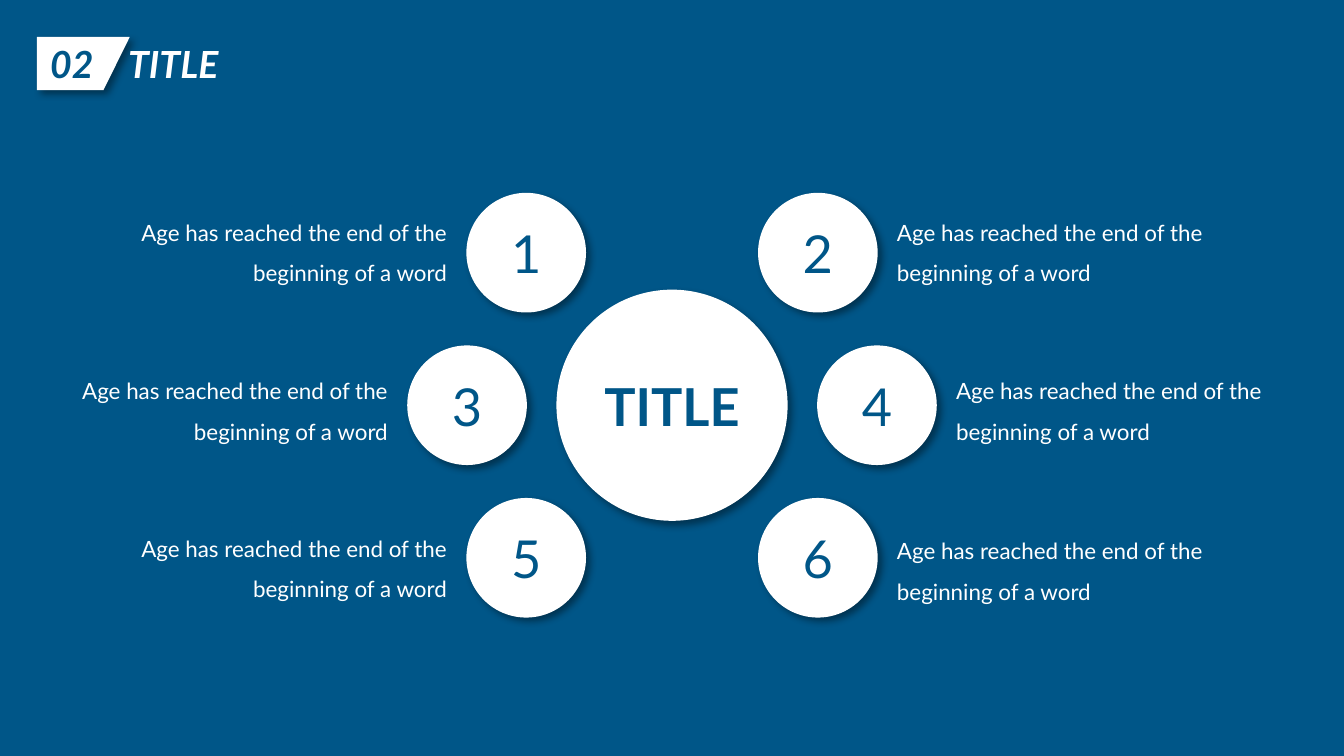
from dataclasses import dataclass

from lxml.etree import SubElement
from pptx import Presentation
from pptx.dml.color import RGBColor
from pptx.enum.shapes import MSO_SHAPE as Shape
from pptx.enum.text import MSO_ANCHOR as Anchor, PP_ALIGN as Align
from pptx.oxml.ns import qn
from pptx.util import Inches, Pt


@dataclass(frozen=True)
class Theme:
    blue: RGBColor = RGBColor(0x00, 0x56, 0x88)
    white: RGBColor = RGBColor(0xFF, 0xFF, 0xFF)
    font: str = "Lato"
    body: int = 12
    heading: int = 20
    display: int = 28


THEME = Theme()
WIDTH, HEIGHT = Inches(10), Inches(5.625)
CENTER_X, CENTER_Y = 50, 30.15
HUB_SIZE, CIRCLE_SIZE = 17.2, 8.9
ROW_PITCH = 11.35
ROW_OFFSETS = (10.85, 15.25, 10.85)
TEXT_GAP, TEXT_MARGIN, TEXT_HEIGHT = 0.45, 2.75, 7.1
TEXT_TOPS = {"left": (14.8, 26.6, 38.3), "right": (14.8, 26.6, 38.5)}
CAPTION = "Age has reached the end of the beginning of a word"


def units(value):
    """One unit is one percent of the slide width, in both directions."""
    return int(WIDTH * value / 100)


def write(shape, text, color, size, align=None, spacing=None, **font_values):
    frame = shape.text_frame
    frame.word_wrap = True
    paragraph = frame.paragraphs[0]
    paragraph.alignment = align
    paragraph.line_spacing = spacing
    run = paragraph.add_run()
    run.text = text
    run.font.color.rgb = color
    values = {"name": THEME.font, "size": Pt(size), **font_values}
    for name, value in values.items():
        setattr(run.font, name, value)


def style_card(shape):
    """White, without outline, with a soft shadow to the lower right."""
    shape.fill.solid()
    shape.fill.fore_color.rgb = THEME.white
    shape.line.fill.background()
    shape.shadow.inherit = False
    effects = shape.element.spPr.find(qn("a:effectLst"))
    shadow = SubElement(effects, qn("a:outerShdw"), {
        "blurRad": str(Pt(4)), "dist": str(Pt(3)), "dir": str(45 * 60000),
        "algn": "tl", "rotWithShape": "0"})
    color = SubElement(shadow, qn("a:srgbClr"), val="000000")
    SubElement(color, qn("a:alpha"), val="40000")
    shape.text_frame.vertical_anchor = Anchor.MIDDLE


def add_circle(shapes, center_x, center_y, size, text, **font_values):
    box = (center_x - size / 2, center_y - size / 2, size, size)
    circle = shapes.add_shape(Shape.OVAL, *map(units, box))
    style_card(circle)
    write(circle, text, THEME.blue, THEME.display, Align.CENTER, **font_values)


def add_text(shapes, box, text, size, align, **format_values):
    textbox = shapes.add_textbox(*map(units, box))
    write(textbox, text, THEME.white, size, align, **format_values)


def add_header(shapes, number, title):
    group = shapes.add_group_shape().shapes
    points = [(2.75, 2.75), (9.65, 2.75), (7.7, 6.7), (2.75, 6.7)]
    start, *others = [(units(x), units(y)) for x, y in points]
    builder = group.build_freeform(*start)
    builder.add_line_segments(others, close=True)
    tag = builder.convert_to_shape()
    style_card(tag)
    emphasis = {"bold": True, "italic": True}
    write(tag, number, THEME.blue, THEME.heading, Align.LEFT, **emphasis)
    add_text(group, (8.2, 2.55, 9.4, 4.4), title, THEME.heading,
             Align.CENTER, **emphasis)


def add_item(shapes, row, side):
    """A numbered circle beside the hub, with its caption on the outside."""
    is_right = side == "right"
    direction = 1 if is_right else -1
    center_x = CENTER_X + direction * ROW_OFFSETS[row]
    center_y = CENTER_Y + (row - 1) * ROW_PITCH
    add_circle(shapes, center_x, center_y, CIRCLE_SIZE,
               str(2 * row + 1 + is_right))

    inner = center_x + direction * (CIRCLE_SIZE / 2 + TEXT_GAP)
    left, right = ((inner, 100 - TEXT_MARGIN) if is_right
                   else (TEXT_MARGIN, inner))
    box = (left, TEXT_TOPS[side][row], right - left, TEXT_HEIGHT)
    add_text(shapes, box, CAPTION, THEME.body,
             Align.LEFT if is_right else Align.RIGHT, spacing=1.5)


def main():
    presentation = Presentation()
    presentation.slide_width, presentation.slide_height = WIDTH, HEIGHT
    slide = presentation.slides.add_slide(presentation.slide_layouts[6])
    background = slide.background.fill
    background.solid()
    background.fore_color.rgb = THEME.blue

    add_header(slide.shapes, "02", "TITLE")
    add_circle(slide.shapes, CENTER_X, CENTER_Y, HUB_SIZE, "TITLE", bold=True)
    for side in TEXT_TOPS:
        for row in range(len(ROW_OFFSETS)):
            add_item(slide.shapes, row, side)
    presentation.save("out.pptx")


if __name__ == "__main__":
    main()
